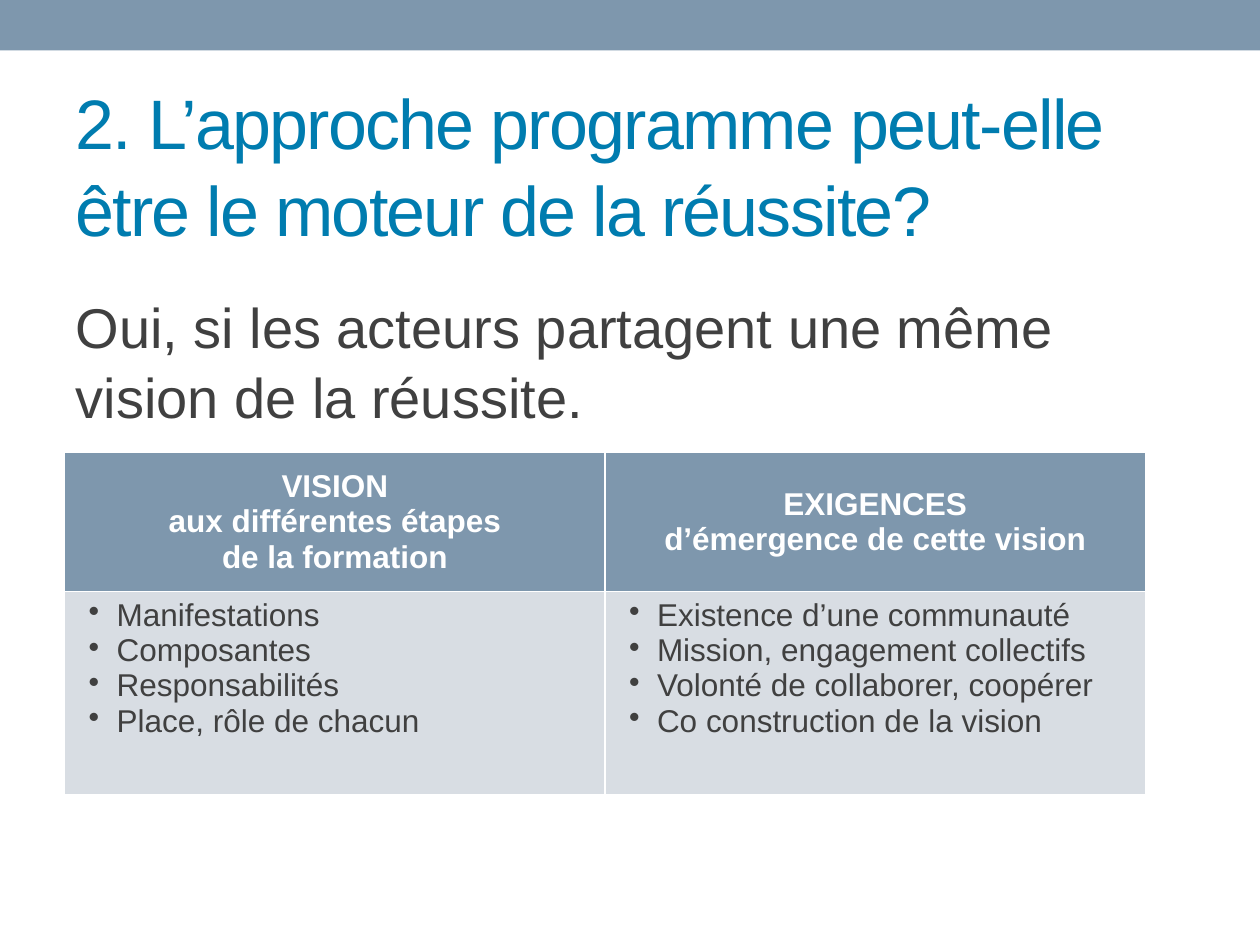
import pptx
import pptx.dml.color
import pptx.enum.shapes
import pptx.enum.text
import pptx.oxml
import pptx.oxml.ns
import pptx.util

Pt = pptx.util.Pt
RGBColor = pptx.dml.color.RGBColor
Align = pptx.enum.text.PP_ALIGN
Anchor = pptx.enum.text.MSO_ANCHOR

SLATE = RGBColor(0x7E, 0x97, 0xAD)
PALE = RGBColor(0xD8, 0xDD, 0xE3)
BLUE = RGBColor(0x00, 0x7C, 0xAF)
DARK = RGBColor(0x40, 0x40, 0x40)
WHITE = RGBColor(0xFF, 0xFF, 0xFF)

HEADERS = [
    ["VISION", "aux différentes étapes", "de la formation"],
    ["EXIGENCES", "d’émergence de cette vision"],
]
ITEMS = [
    ["Manifestations", "Composantes", "Responsabilités", "Place, rôle de chacun"],
    ["Existence d’une communauté", "Mission, engagement collectifs",
     "Volonté de collaborer, coopérer", "Co construction de la vision"],
]


class SlideBuilder:
    font_name = "Arial"

    def __init__(self, slide):
        self.slide = slide

    def format(self, paragraph, size, color, bold=False, align=Align.LEFT):
        paragraph.alignment = align
        font = paragraph.font
        font.name, font.size, font.bold = self.font_name, Pt(size), bold
        font.color.rgb = color

    def set_bullet(self, paragraph, character=None, indent=0, hanging=0):
        """Give the paragraph a bullet, or none when there is no character."""
        properties = paragraph._p.get_or_add_pPr()
        properties.set("marL", str(Pt(indent)))
        properties.set("indent", str(-Pt(hanging)))
        tag = "a:buChar" if character else "a:buNone"
        bullet = pptx.oxml.parse_xml(f"<{tag} {pptx.oxml.ns.nsdecls('a')}/>")
        if character:
            bullet.set("char", character)
        # Bullets come before the default run properties in the schema.
        defaults = properties.find(pptx.oxml.ns.qn("a:defRPr"))
        defaults.addprevious(bullet)

    def band(self, left, top, width, height, color):
        shape = self.slide.shapes.add_shape(
            pptx.enum.shapes.MSO_SHAPE.RECTANGLE,
            Pt(left), Pt(top), Pt(width), Pt(height))
        shape.shadow.inherit = False
        shape.fill.solid()
        shape.fill.fore_color.rgb = color
        shape.line.fill.background()

    def placeholder(self, index, text, box, size, color, anchor):
        shape = self.slide.placeholders[index]
        shape.left, shape.top, shape.width, shape.height = map(Pt, box)
        frame = shape.text_frame
        frame.text = text
        frame.word_wrap = True
        frame.auto_size = pptx.enum.text.MSO_AUTO_SIZE.NONE
        frame.vertical_anchor = anchor
        paragraph = frame.paragraphs[0]
        paragraph.line_spacing = 1.04
        self.format(paragraph, size, color)
        return paragraph

    def title(self, text, box):
        paragraph = self.placeholder(0, text, box, 40, BLUE, Anchor.MIDDLE)
        paragraph.font._element.set("spc", "-100")

    def body(self, text, box):
        paragraph = self.placeholder(1, text, box, 32, DARK, Anchor.TOP)
        paragraph.space_before, paragraph.space_after = Pt(3), Pt(6)
        self.set_bullet(paragraph)

    def cell(self, cell, lines, is_header):
        cell.fill.solid()
        cell.fill.fore_color.rgb = SLATE if is_header else PALE
        cell.vertical_anchor = Anchor.MIDDLE if is_header else Anchor.TOP
        cell.text_frame.text = "\n".join(lines)
        for paragraph in cell.text_frame.paragraphs:
            if is_header:
                self.format(paragraph, 18, WHITE, True, Align.CENTER)
            else:
                self.format(paragraph, 18, DARK)
                self.set_bullet(paragraph, "•", 22.5, 16)

    def table(self, rows, left, top, width, row_heights):
        table = self.slide.shapes.add_table(
            len(rows), len(rows[0]), Pt(left), Pt(top),
            Pt(width), Pt(sum(row_heights))).table
        table.horz_banding = False
        for row_index, (row, height) in enumerate(zip(rows, row_heights)):
            table.rows[row_index].height = Pt(height)
            for column_index, lines in enumerate(row):
                self.cell(table.cell(row_index, column_index), lines, row_index == 0)


def main():
    presentation = pptx.Presentation()
    presentation.slide_width, presentation.slide_height = Pt(720), Pt(540)
    slide = presentation.slides.add_slide(presentation.slide_layouts[1])
    builder = SlideBuilder(slide)
    builder.band(0, 0, 720, 28.8, SLATE)
    builder.title("2. L’approche programme peut-elle être le moteur de la réussite?",
                  (36, 42, 648, 103))
    builder.body("Oui, si les acteurs partagent une même vision de la réussite.",
                 (36, 162, 648, 348))
    builder.table([HEADERS, ITEMS], 37, 258.5, 617.5, [79.5, 116])
    presentation.save("out.pptx")


if __name__ == "__main__":
    main()
